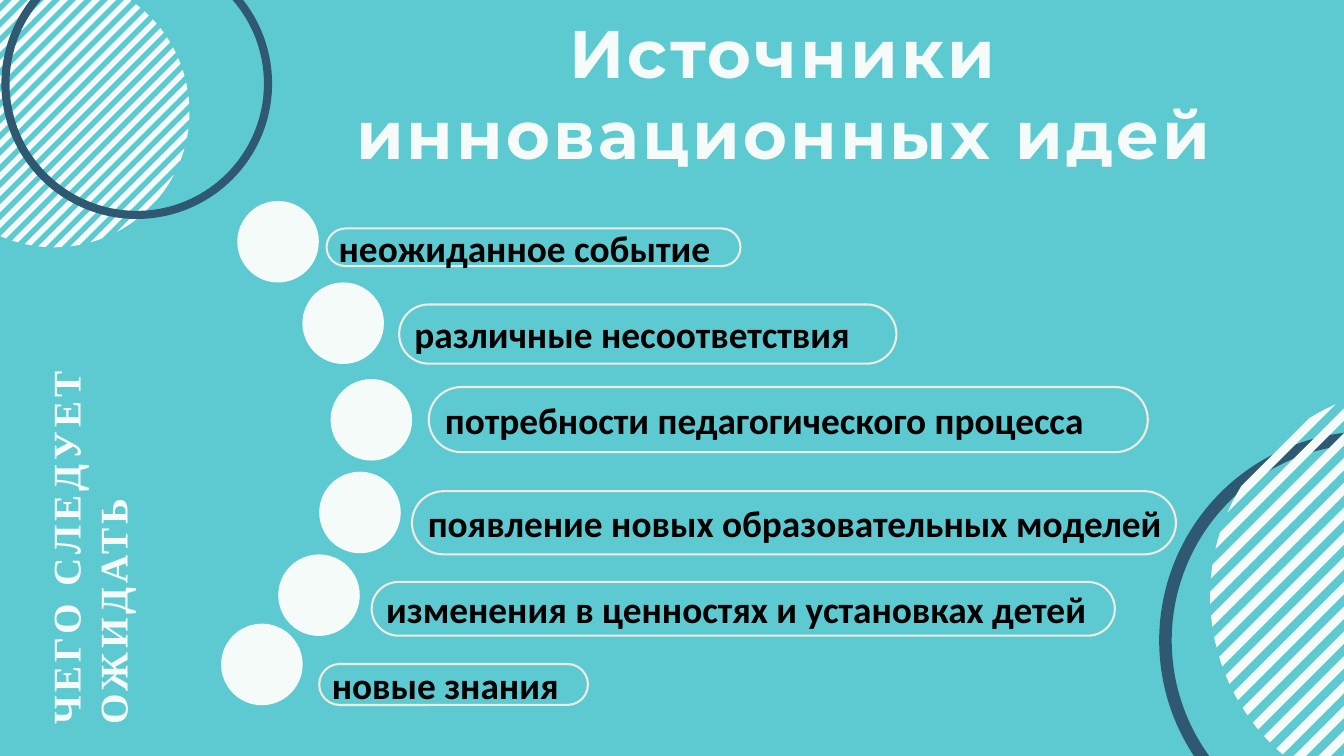
"""Build the slide about sources of innovative ideas."""
from math import sqrt

from pptx import Presentation
from pptx.dml.color import RGBColor
from pptx.enum.shapes import MSO_SHAPE as SHAPE
from pptx.enum.text import MSO_ANCHOR as ANCHOR, PP_ALIGN as ALIGN
from pptx.oxml.ns import qn
from pptx.util import Pt

COLORS = {
    "background": "5DCAD1",
    "light": "F5FBF9",
    "navy": "2F5972",
    "outline": "EEECE1",
    "text": "000000",
}
DOT_SIZE = 87.4
SOURCES = [
    ("неожиданное событие", (254.2, 215.3), (349.9, 244.8, 443.5, 40.3)),
    ("различные несоответствия", (324, 302.6), (427.7, 326.2, 532.8, 63.4)),
    ("потребности педагогического процесса", (354.2, 406.1), (459.4, 414.7, 770.4, 69.8)),
    ("появление новых образовательных моделей", (342, 505.4), (441.4, 526.3, 818.6, 67.7)),
    ("изменения в ценностях и установках детей", (298.1, 594), (398.2, 623.5, 796.3, 57.6)),
    ("новые знания", (236.9, 668.2), (342, 711.4, 288, 43.9)),
]


def color(name):
    return RGBColor.from_string(COLORS[name])


def paint(shape, name):
    shape.shadow.inherit = False
    shape.fill.solid()
    shape.fill.fore_color.rgb = color(name)
    shape.line.fill.background()


def style(paragraph, font_name, size, color_name, spacing=0):
    font = paragraph.font
    font.name, font.size, font.bold = font_name, Pt(size), True
    font.color.rgb = color(color_name)
    if spacing:
        paragraph._p.pPr.find(qn("a:defRPr")).set("spc", str(round(spacing * 100)))


def add_round(slide, kind, left, top, size, color_name):
    shape = slide.shapes.add_shape(kind, Pt(left), Pt(top), Pt(size), Pt(size))
    paint(shape, color_name)
    return shape


def add_ring(slide, left, top, size):
    ring = add_round(slide, SHAPE.DONUT, left, top, size, "navy")
    ring.adjustments[0] = 0.03


def stripe_points(center_x, center_y, radius, offset, width):
    steps = [offset + width * part / 4 for part in range(5)]
    chord = [(u, sqrt(1 - u * u)) for u in steps]
    outline = chord + [(u, -v) for u, v in reversed(chord)]
    scale = radius / sqrt(2)
    return [(Pt(center_x + (u + v) * scale), Pt(center_y + (u - v) * scale))
            for u, v in outline]


def add_striped_disc(slide, center_x, center_y, radius):
    stripes = [stripe_points(center_x, center_y, radius, -0.973 + 0.0838 * index, 0.042)
               for index in range(24)]
    builder = slide.shapes.build_freeform(*stripes[0][0])
    builder.add_line_segments(stripes[0][1:], close=True)
    for start, *rest in stripes[1:]:
        builder.move_to(*start)
        builder.add_line_segments(rest, close=True)
    paint(builder.convert_to_shape(), "light")


def add_label(slide, text, box):
    shape = slide.shapes.add_shape(SHAPE.ROUNDED_RECTANGLE, *map(Pt, box))
    shape.shadow.inherit = False
    shape.adjustments[0] = 0.5
    shape.fill.background()
    shape.line.color.rgb = color("outline")
    shape.line.width = Pt(2.25)
    frame = shape.text_frame
    frame.word_wrap = False
    frame.vertical_anchor = ANCHOR.MIDDLE
    paragraph = frame.paragraphs[0]
    paragraph.text = text
    paragraph.alignment = ALIGN.LEFT
    style(paragraph, "Calibri", 40, "text")


def add_text(slide, text, box):
    shape = slide.shapes.add_textbox(*map(Pt, box))
    shape.text_frame.word_wrap = True
    paragraph = shape.text_frame.paragraphs[0]
    paragraph.text = text
    return shape, paragraph


def add_side_heading(slide):
    shape, paragraph = add_text(slide, "ЧЕГО СЛЕДУЕТ ОЖИДАТЬ", (-139.7, 488.2, 472.3, 104.4))
    shape.rotation = 270
    frame = shape.text_frame
    frame.margin_left = frame.margin_right = frame.margin_top = frame.margin_bottom = 0
    paragraph.line_spacing = Pt(50.4)
    style(paragraph, "Times New Roman", 42, "light", 4.2)


def add_title(slide):
    _, paragraph = add_text(slide, "Источники \vинновационных идей ", (370, 8.6, 964, 206))
    paragraph.alignment = ALIGN.CENTER
    style(paragraph, "Montserrat", 72, "light", 3.4)


def main():
    presentation = Presentation()
    presentation.slide_width, presentation.slide_height = Pt(1440), Pt(810)
    slide = presentation.slides.add_slide(presentation.slide_layouts[6])
    slide.background.fill.solid()
    slide.background.fill.fore_color.rgb = color("background")
    add_ring(slide, 1242, 462.3, 448)
    add_striped_disc(slide, 1520.6, 638.6, 224)
    add_striped_disc(slide, 58, 120, 145)
    add_ring(slide, 1.5, -55.4, 290)
    add_side_heading(slide)
    for text, dot, box in SOURCES:
        add_round(slide, SHAPE.OVAL, *dot, DOT_SIZE, "light")
        add_label(slide, text, box)
    add_title(slide)
    presentation.save("out.pptx")


if __name__ == "__main__":
    main()
